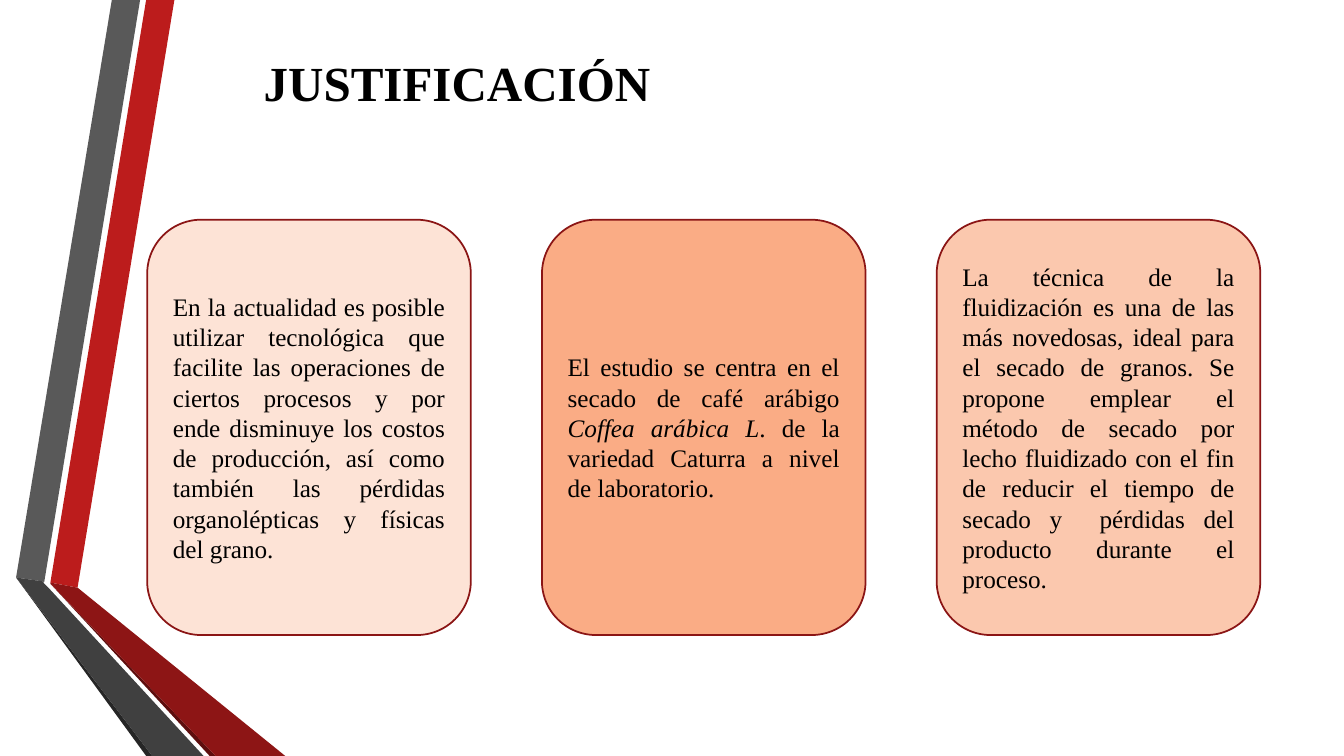
from dataclasses import dataclass

from pptx import Presentation
from pptx.dml.color import RGBColor
from pptx.enum.shapes import MSO_SHAPE
from pptx.enum.text import MSO_ANCHOR, MSO_AUTO_SIZE, PP_ALIGN
from pptx.util import Pt

ROUNDED = MSO_SHAPE.ROUNDED_RECTANGLE
MIDDLE = MSO_ANCHOR.MIDDLE
NO_FIT = MSO_AUTO_SIZE.NONE
CENTER, JUSTIFY = PP_ALIGN.CENTER, PP_ALIGN.JUSTIFY
PX = 9144
SLIDE_W, SLIDE_H = 1333, 750
TITLE_ONLY = 5


@dataclass(frozen=True)
class Theme:
    font: str = "Times New Roman"
    title_size: int = 35
    body_size: int = 18
    text: str = "000000"
    outline: str = "8B1515"
    outline_width: float = 1.25
    red: str = "BC1C1C"
    dark_red: str = "8D1515"
    deep_red: str = "5E0E0E"
    gray: str = "595959"
    dark_gray: str = "404040"
    deep_gray: str = "262626"
    cards: tuple = ("FDE3D6", "FAAC85", "FBC8AE")


THEME = Theme()

RIBBONS = [
    (THEME.red, [(50, 578), (77, 583), (173, 0), (145, 0)]),
    (THEME.gray, [(139, 0), (111, 0), (16, 573), (44, 577)]),
    (THEME.deep_gray, [(16, 573), (145, 750), (151, 750)]),
    (THEME.deep_red, [(50, 579), (208, 750), (214, 750)]),
    (THEME.dark_red, [(50, 579), (214, 750), (283, 750), (77, 583), (50, 578)]),
    (THEME.dark_gray, [(202, 750), (48, 583), (43, 578), (44, 577), (16, 573), (151, 750)]),
]

CARDS = [
    [("En la actualidad es posible utilizar tecnológica que facilite las operaciones "
      "de ciertos procesos y por ende disminuye los costos de producción, así como "
      "también las pérdidas organolépticas y físicas del grano.", False)],
    [("El estudio se centra en el secado de café arábigo ", False),
     ("Coffea arábica L", True),
     (". de la variedad Caturra a nivel de laboratorio.", False)],
    [("La técnica de la fluidización es una de las más novedosas, ideal para el secado "
      "de granos. Se propone emplear el método de secado por lecho fluidizado con el "
      "fin de reducir el tiempo de secado y  pérdidas del producto durante el proceso.",
      False)],
]


def px(*lengths):
    return [round(n * PX) for n in lengths]


def rgb(color):
    return RGBColor.from_string(color)


def add_text(p, text, size=THEME.body_size, bold=False, italic=False, color=THEME.text):
    r = p.add_run()
    r.text = text
    r.font.name = THEME.font
    r.font.size = Pt(size)
    r.font.bold = bold
    r.font.italic = italic
    r.font.color.rgb = rgb(color)


def start_paragraph(sp, align):
    tf = sp.text_frame
    tf.word_wrap = True
    tf.auto_size = NO_FIT
    tf.vertical_anchor = MIDDLE
    p = tf.paragraphs[0]
    p.alignment = align
    return p


def paint(sp, color):
    sp.shadow.inherit = False
    sp.fill.solid()
    sp.fill.fore_color.rgb = rgb(color)


def draw_ribbons(s, x, y):
    for color, points in RIBBONS:
        first, *rest = [(x + dx, y + dy) for dx, dy in points]
        builder = s.shapes.build_freeform(*first, scale=PX)
        builder.add_line_segments(rest, close=True)
        sp = builder.convert_to_shape()
        paint(sp, color)
        sp.line.fill.background()


def draw_title(s, text, x, y, w, h):
    sp = s.shapes.title
    sp.left, sp.top, sp.width, sp.height = px(x, y, w, h)
    add_text(start_paragraph(sp, CENTER), text, size=THEME.title_size, bold=True)


def draw_cards(s, x, y, w, h, card_w):
    step = (w - card_w) / (len(CARDS) - 1)
    for i, (runs, color) in enumerate(zip(CARDS, THEME.cards)):
        sp = s.shapes.add_shape(ROUNDED, *px(x + i * step, y, card_w, h))
        paint(sp, color)
        sp.line.color.rgb = rgb(THEME.outline)
        sp.line.width = Pt(THEME.outline_width)
        p = start_paragraph(sp, JUSTIFY)
        for text, italic in runs:
            add_text(p, text, italic=italic)


def main():
    prs = Presentation()
    prs.slide_width, prs.slide_height = px(SLIDE_W, SLIDE_H)
    s = prs.slides.add_slide(prs.slide_layouts[TITLE_ONLY])
    draw_ribbons(s, 0, 0)
    draw_title(s, "JUSTIFICACIÓN", 245, 44, 417, 75)
    draw_cards(s, 146, 218, 1104, 412, card_w=321)
    prs.save("out.pptx")


if __name__ == "__main__":
    main()
